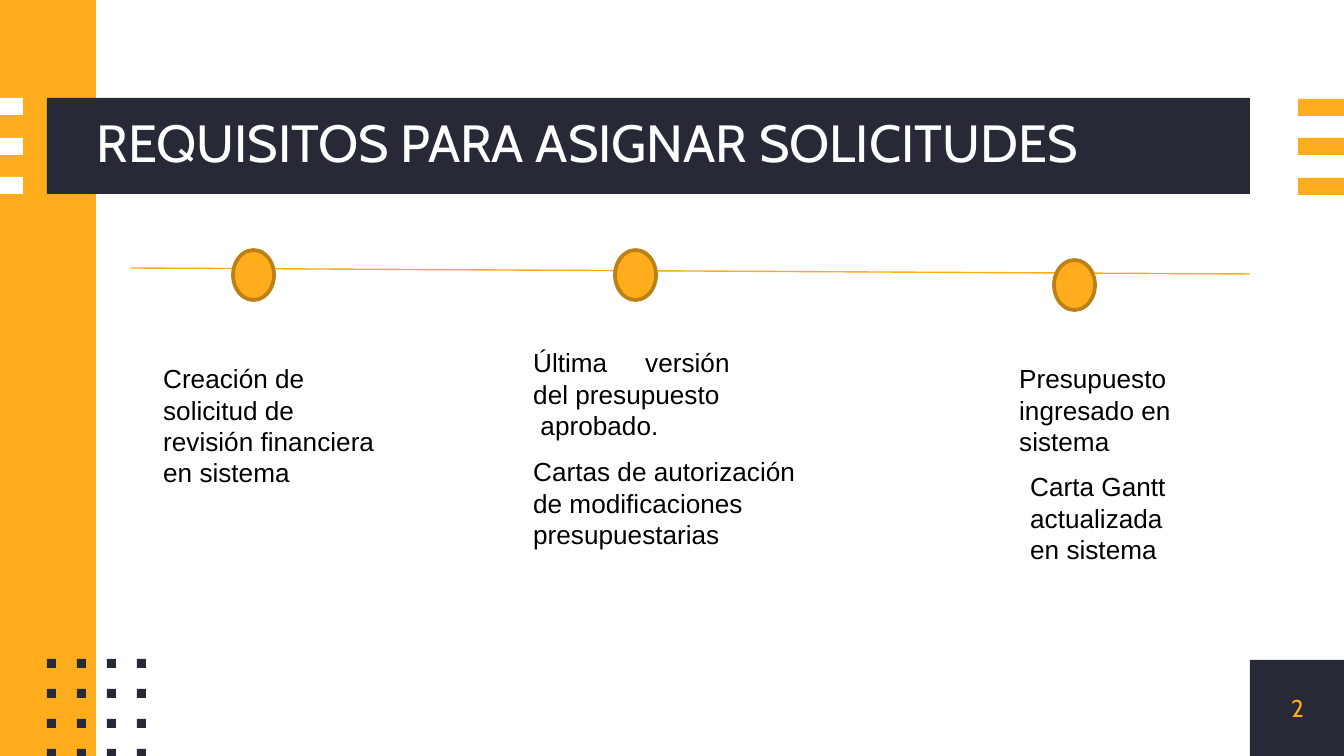
from pptx import Presentation
from pptx.dml.color import RGBColor
from pptx.enum.shapes import MSO_CONNECTOR as CONNECTOR, MSO_SHAPE as SHAPE
from pptx.enum.text import MSO_ANCHOR as ANCHOR, MSO_AUTO_SIZE as AUTO_SIZE, PP_ALIGN as ALIGN
from pptx.oxml import parse_xml
from pptx.oxml.ns import nsdecls
from pptx.util import Pt

PX = 6804
COLORS = {
    "dark": "272A36",
    "amber": "FFAD1D",
    "line": "FFAB17",
    "rim": "BD8015",
    "white": "FFFFFF",
    "text": "000000",
}


def px(*lengths):
    return [length * PX for length in lengths]


def rgb(name):
    return RGBColor.from_string(COLORS[name])


def set_font(paragraph, face, size, color):
    font = paragraph.font
    font.name, font.size, font.bold = face, Pt(size), False
    font.color.rgb = rgb(color)


def clear_insets(frame):
    frame.margin_left = frame.margin_right = 0
    frame.margin_top = frame.margin_bottom = 0
    frame.vertical_anchor = ANCHOR.MIDDLE
    frame.word_wrap = True


def add_filled(slide, kind, box, color):
    shape = slide.shapes.add_shape(kind, *px(*box))
    shape.shadow.inherit = False
    shape.fill.solid()
    shape.fill.fore_color.rgb = rgb(color)
    shape.line.fill.background()
    return shape


def add_stripes(slide, box, color):
    left, top, width, height = box
    thickness = 17
    step = (height - thickness) / 2
    for row in range(3):
        stripe = (left, round(top + row * step), width, thickness)
        add_filled(slide, SHAPE.RECTANGLE, stripe, color)


def add_dots(slide, left, top):
    step, side = 30, 9
    for row in range(4):
        for column in range(4):
            dot = (left + column * step, top + row * step, side, side)
            add_filled(slide, SHAPE.RECTANGLE, dot, "dark")


def add_header(slide, box):
    left, top, width, height = box
    add_filled(slide, SHAPE.RECTANGLE, box, "dark")
    add_stripes(slide, (0, top, 23, height), "white")
    add_stripes(slide, (1298, top + 1, 46, height), "amber")
    title = slide.shapes.title
    title.left, title.top, title.width, title.height = px(left + 50, top, width - 50, height)
    slide.shapes._spTree.append(title._element)
    frame = title.text_frame
    frame.text = "REQUISITOS PARA ASIGNAR SOLICITUDES"
    clear_insets(frame)
    frame.auto_size = AUTO_SIZE.NONE
    heading = frame.paragraphs[0]
    heading.alignment = ALIGN.LEFT
    heading.line_spacing = 0.9
    set_font(heading, "Cabin", 28, "white")


def add_page_number(slide, box, number):
    corner = add_filled(slide, SHAPE.RECTANGLE, box, "dark")
    frame = corner.text_frame
    frame.text = number
    clear_insets(frame)
    frame.paragraphs[0].alignment = ALIGN.CENTER
    set_font(frame.paragraphs[0], "Cabin", 13, "amber")


def add_timeline(slide, box, markers):
    left, top, width, height = box
    axis = slide.shapes.add_connector(
        CONNECTOR.STRAIGHT, *px(left, top, left + width, top + height))
    axis.line.color.rgb = rgb("line")
    axis.line.width = Pt(0.75)
    axis._element.spPr.append(parse_xml(f"<a:effectLst {nsdecls('a')}/>"))
    for across, down in markers:
        marker = add_filled(slide, SHAPE.OVAL, (left + across, top + down, 41, 50), "amber")
        marker.line.color.rgb = rgb("rim")
        marker.line.width = Pt(2)


def add_requirement(slide, box, lines, first_alignment=ALIGN.LEFT):
    requirement = slide.shapes.add_textbox(*px(*box))
    frame = requirement.text_frame
    frame.text = "\n".join(lines)
    frame.word_wrap = True
    frame.auto_size = AUTO_SIZE.SHAPE_TO_FIT_TEXT
    for paragraph in frame.paragraphs:
        paragraph.alignment = ALIGN.LEFT
        set_font(paragraph, "Arial", 14, "text")
    frame.paragraphs[0].alignment = first_alignment


def add_requirements(slide, left, top):
    requirements = [
        ((0, 16, 255, 140), ["Creación de solicitud de revisión financiera en sistema"], ALIGN.LEFT),
        ((370, 0, 223, 109), ["Última versión del presupuesto", " aprobado."], ALIGN.JUSTIFY),
        ((370, 109, 300, 109), ["Cartas de autorización de modificaciones presupuestarias"], ALIGN.LEFT),
        ((856, 16, 210, 109), ["Presupuesto ingresado en sistema"], ALIGN.LEFT),
        ((867, 124, 163, 109), ["Carta Gantt actualizada en sistema"], ALIGN.LEFT),
    ]
    for (across, down, width, height), lines, alignment in requirements:
        add_requirement(slide, (left + across, top + down, width, height), lines, alignment)


def main():
    deck = Presentation()
    deck.slide_width, deck.slide_height = px(1344, 756)
    slide = deck.slides.add_slide(deck.slide_layouts[5])
    add_filled(slide, SHAPE.RECTANGLE, (0, 0, 96, 756), "amber")
    add_dots(slide, 47, 659)
    add_header(slide, (47, 98, 1203, 96))
    add_page_number(slide, (1250, 660, 95, 96), "2")
    add_timeline(slide, (131, 268, 1119, 6), [(102, -18), (484, -18), (923, -8)])
    add_requirements(slide, 150, 340)
    deck.save("out.pptx")


if __name__ == "__main__":
    main()
